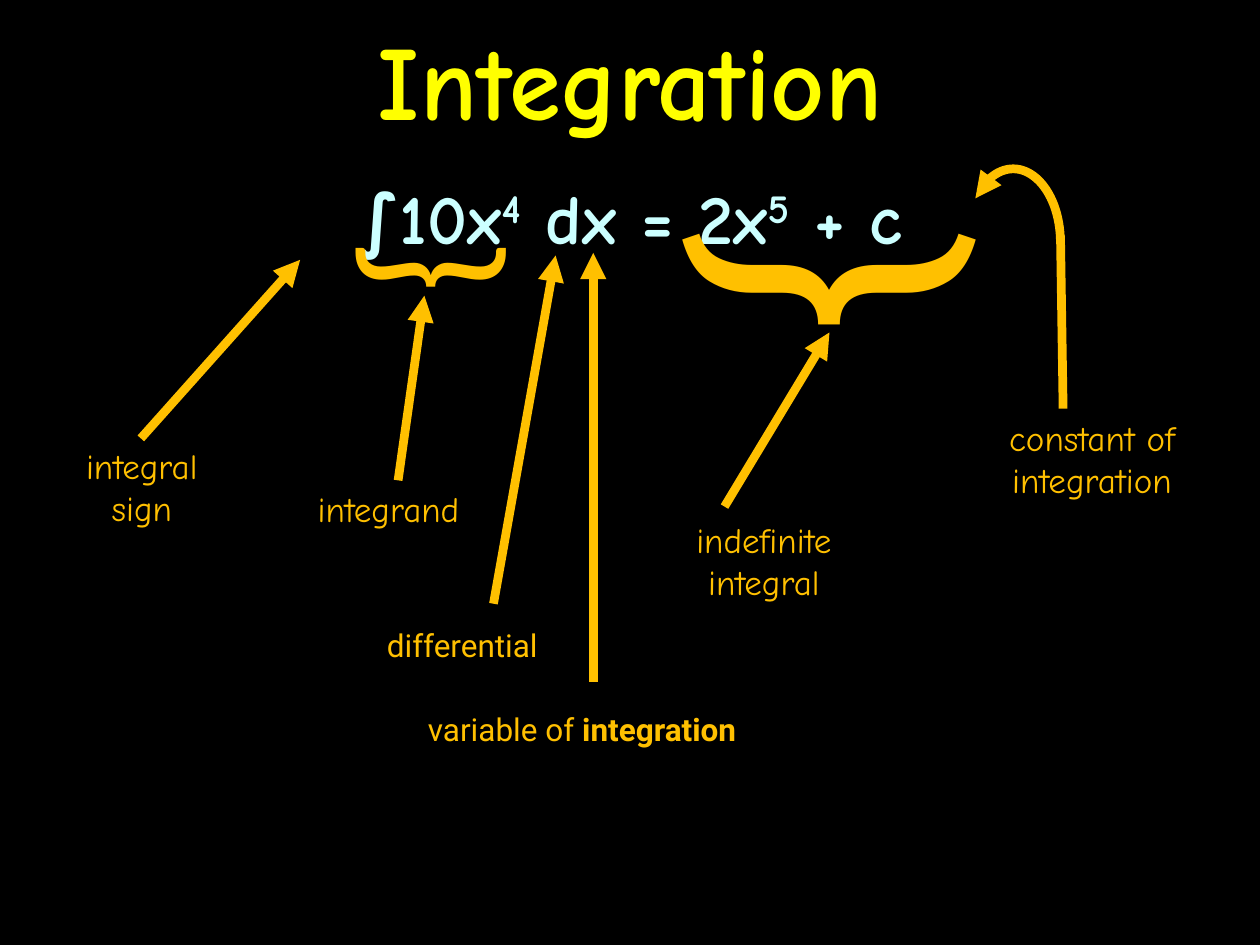
import dataclasses

import pptx
import pptx.dml.color
import pptx.enum.dml
import pptx.enum.shapes
import pptx.enum.text
import pptx.oxml
import pptx.oxml.ns
import pptx.util

Pt = pptx.util.Pt
CENTER = pptx.enum.text.PP_ALIGN.CENTER
LEFT = pptx.enum.text.PP_ALIGN.LEFT


@dataclasses.dataclass(frozen=True)
class Theme:
    background: str = "000000"
    title_color: str = "FFFF00"
    formula_color: str = "CCFFFF"
    label_color: str = "FFC000"
    hand_font: str = "Comic Neue"
    plain_font: str = "Roboto"
    brace_font: str = "Calibri"
    title_size: int = 60
    formula_size: int = 40
    label_size: int = 20
    plain_size: int = 18
    line_width: int = 5


def rgb(color):
    return pptx.dml.color.RGBColor.from_string(color)


class SlideBuilder:
    def __init__(self, slide, theme):
        self.slide = slide
        self.theme = theme
        slide.background.fill.solid()
        slide.background.fill.fore_color.rgb = rgb(theme.background)

    def add_run(self, paragraph, text, font, size, color, bold=False, baseline=0):
        run = paragraph.add_run()
        run.text = text
        run.font.name = font
        run.font.size = Pt(size)
        run.font.bold = bold
        run.font.color.rgb = rgb(color)
        if baseline:
            run.font._element.set("baseline", str(baseline * 1000))

    def title(self, text, box):
        title = self.slide.shapes.title
        title.left, title.top, title.width, title.height = map(Pt, box)
        frame = title.text_frame
        frame.vertical_anchor = pptx.enum.text.MSO_ANCHOR.MIDDLE
        frame.paragraphs[0].alignment = CENTER
        self.add_run(frame.paragraphs[0], text, self.theme.hand_font,
                     self.theme.title_size, self.theme.title_color, bold=True)

    def text_box(self, box, grow=True):
        shape = self.slide.shapes.add_textbox(*map(Pt, box))
        shape.text_frame.word_wrap = True
        if grow:
            shape.text_frame.auto_size = pptx.enum.text.MSO_AUTO_SIZE.SHAPE_TO_FIT_TEXT
        return shape

    def formula(self, parts, box):
        """Write (text, superscript percent) parts on one centred line."""
        paragraph = self.text_box(box, grow=False).text_frame.paragraphs[0]
        paragraph.alignment = CENTER
        paragraph.space_before = Pt(self.theme.formula_size * 0.2)
        for text, baseline in parts:
            self.add_run(paragraph, text, self.theme.hand_font, self.theme.formula_size,
                         self.theme.formula_color, bold=True, baseline=baseline)

    def label(self, lines, box):
        frame = self.text_box(box).text_frame
        for index, line in enumerate(lines):
            paragraph = frame.add_paragraph() if index else frame.paragraphs[0]
            paragraph.alignment = CENTER
            self.add_run(paragraph, line, self.theme.hand_font,
                         self.theme.label_size, self.theme.label_color)

    def plain_label(self, parts, box):
        """Write (text, bold) parts on one left-aligned line."""
        paragraph = self.text_box(box).text_frame.paragraphs[0]
        paragraph.alignment = LEFT
        for text, bold in parts:
            self.add_run(paragraph, text, self.theme.plain_font,
                         self.theme.plain_size, self.theme.label_color, bold=bold)

    def brace(self, font, size, box):
        """Turn a curly bracket so that it lies under the formula."""
        shape = self.text_box(box)
        shape.rotation = 270
        paragraph = shape.text_frame.paragraphs[0]
        paragraph.alignment = CENTER
        self.add_run(paragraph, "{", font, size, self.theme.label_color)

    def style_line(self, shape, arrow_end=None):
        shape.line.color.rgb = rgb(self.theme.label_color)
        shape.line.width = Pt(self.theme.line_width)
        if arrow_end:
            arrow = pptx.oxml.parse_xml(
                f'<a:{arrow_end} {pptx.oxml.ns.nsdecls("a")} type="triangle"/>')
            shape.line._get_or_add_ln().append(arrow)

    def line(self, start, end, arrow_end="tailEnd"):
        connector = self.slide.shapes.add_connector(
            pptx.enum.shapes.MSO_CONNECTOR.STRAIGHT, *map(Pt, start + end))
        self.style_line(connector, arrow_end)
        connector._element.spPr.append(
            pptx.oxml.parse_xml(f'<a:effectLst {pptx.oxml.ns.nsdecls("a")}/>'))

    def arc(self, box, start_angle):
        """Draw an arc clockwise from start_angle degrees to the right-hand side."""
        arc = self.slide.shapes.add_shape(
            pptx.enum.shapes.MSO_SHAPE.ARC, *map(Pt, box))
        arc.adjustments[0] = start_angle * 60000 / 100000
        arc.adjustments[1] = 0
        arc.fill.background()
        arc.shadow.inherit = False
        self.style_line(arc, "headEnd")


def main():
    presentation = pptx.Presentation()
    presentation.slide_width, presentation.slide_height = Pt(720), Pt(540)
    theme = Theme()
    builder = SlideBuilder(
        presentation.slides.add_slide(presentation.slide_layouts[5]), theme)

    builder.title("Integration", (0, 0, 720, 90))
    builder.formula([("∫10x", 0), ("4", 30), (" dx = 2x", 0), ("5", 30), (" + c", 0)],
                    (36, 96, 648, 444))

    for lines, box in [
        (["integral sign"], (36, 250.5, 90, 55.5)),
        (["constant of integration"], (564, 234.5, 120, 80)),
        (["integrand"], (162, 275, 120, 31.5)),
        (["indefinite", "integral"], (376.5, 292.5, 120, 55.5)),
    ]:
        builder.label(lines, box)
    builder.plain_label([("variable of\u00a0".replace("\u00a0", " "), False),
                         ("integration", True)], (237.5, 402, 210, 29.5))
    builder.plain_label([("differential", False)], (214, 354, 120, 29.5))

    builder.brace(theme.brace_font, 100, (203, 88, 66, 128))
    builder.brace(theme.plain_font, 175, (425, 55.5, 66, 219.5))

    for start, end in [
        ((80.5, 250.5), (171.5, 148.5)),   # integral sign
        ((227.5, 274.5), (242.5, 169)),    # integrand
        ((414, 289.5), (474, 190)),        # indefinite integral
        ((339, 389.5), (339, 144.5)),      # variable of integration
        ((282, 345), (317.5, 146)),        # differential
    ]:
        builder.line(start, end)

    builder.arc((552, 96.5, 54, 84), 229.3)
    builder.line((607.5, 233.5), (606, 134.5), arrow_end=None)

    presentation.save("out.pptx")


if __name__ == "__main__":
    main()
